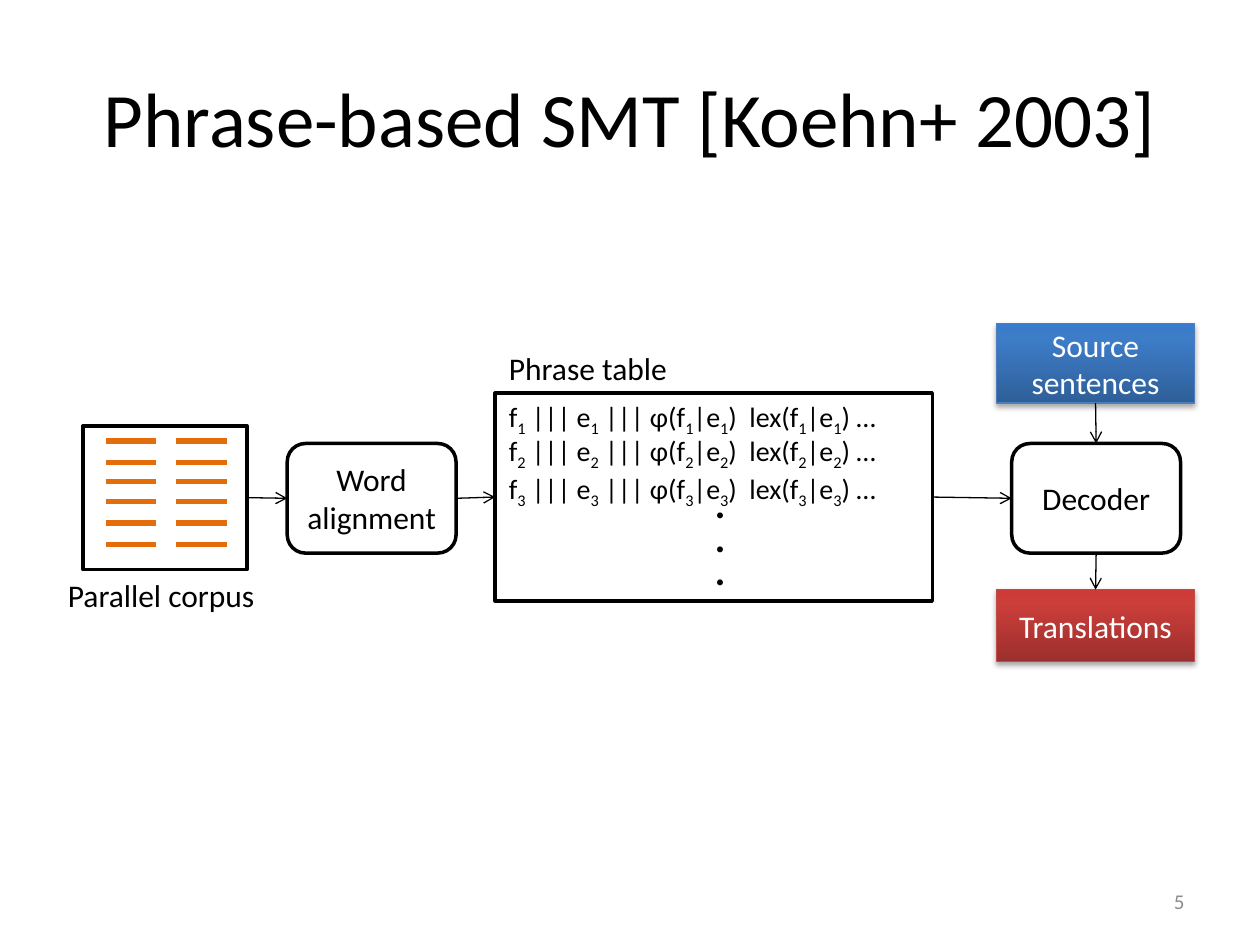
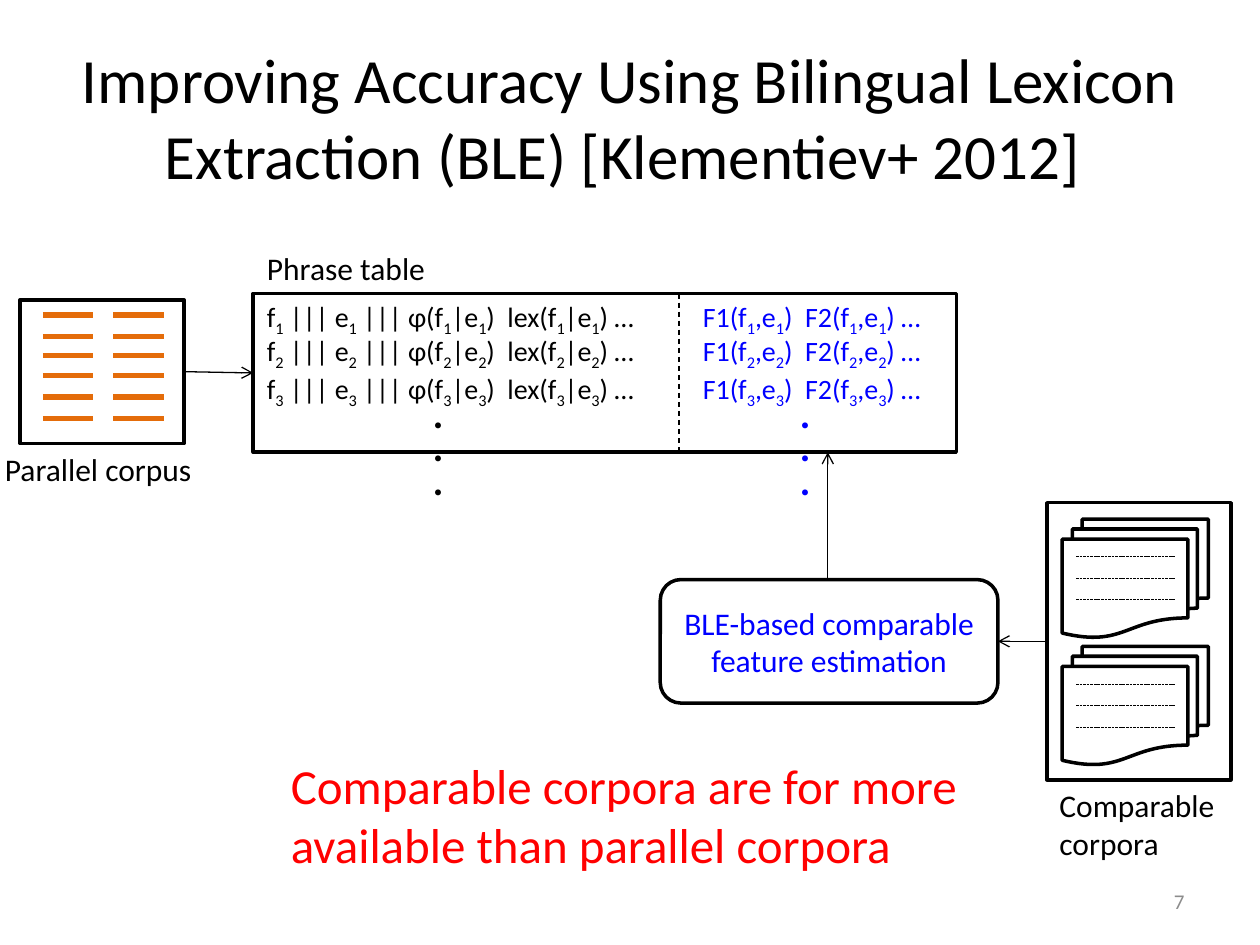
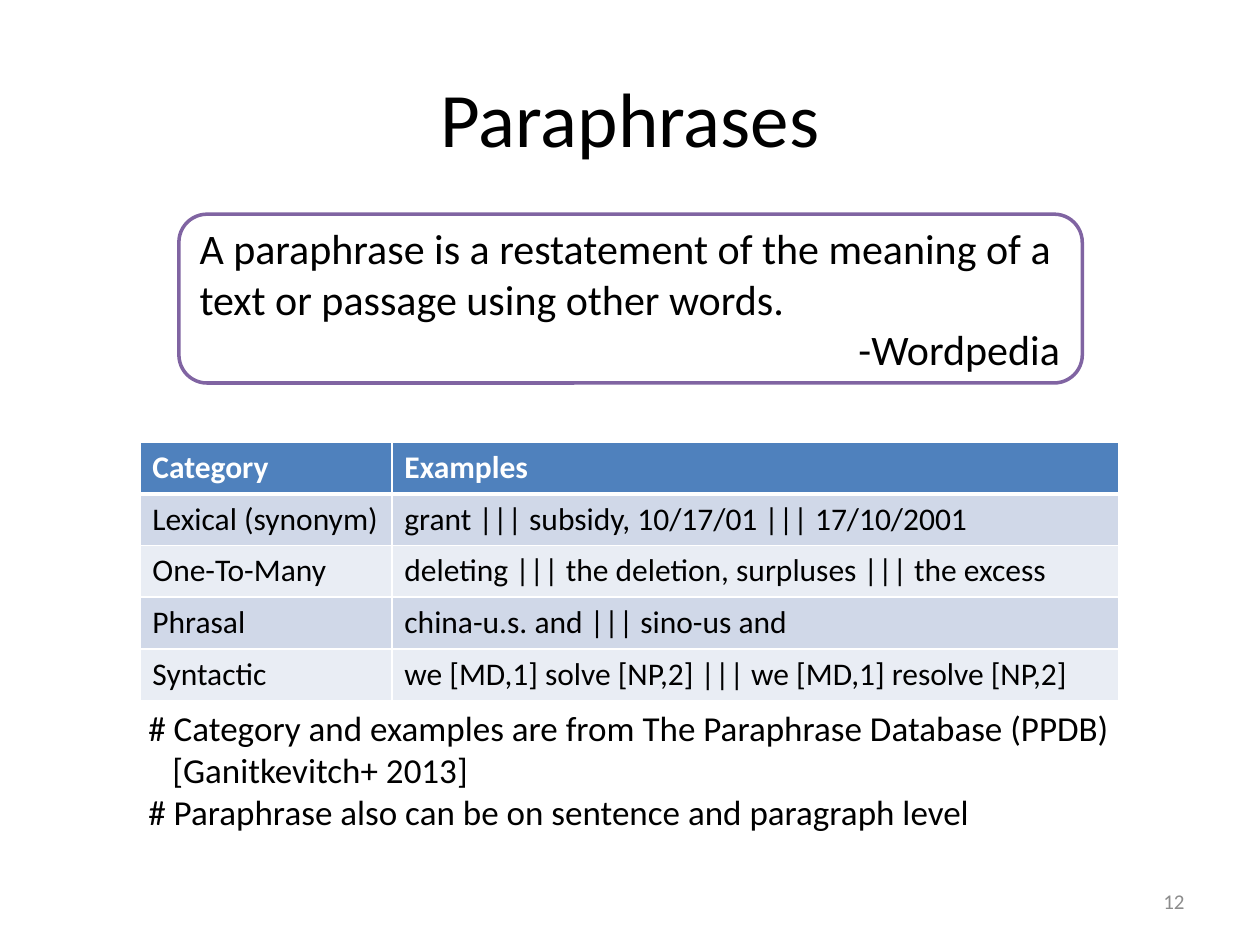
from dataclasses import dataclass

from lxml import etree
from pptx import Presentation
from pptx import util as u
from pptx.dml.color import RGBColor
from pptx.enum import dml, shapes, text
from pptx.oxml.ns import qn

# ---- Content ----
TITLES = {
    "smt": "Phrase-based SMT [Koehn+ 2003]",
    "ble": "Improving Accuracy Using Bilingual Lexicon Extraction (BLE) [Klementiev+ 2012] ",
    "paraphrases": "Paraphrases",
}
# An underscore lowers the one character that follows it.
PHRASE_ROW = "f_{n} ||| e_{n} ||| φ(f_{n}|e_{n})  lex(f_{n}|e_{n}) …"
FEATURE_ROW = "F1(f_{n},e_{n})  F2(f_{n},e_{n}) …"
DOTS_STACKED = ["・", "・", "・"]
DOTS_WRAPPED = ["・ ・ ・"]
CLAIM = ["Comparable corpora are for more", "available than parallel corpora"]
# A pair is a text and its left indent in inches.
DEFINITION = [
    "A paraphrase is a restatement of the meaning of a text or passage using other words.",
    ("-Wordpedia", 5.23),
]
CATEGORIES = [
    ("Category", "Examples"),
    ("Lexical (synonym)", "grant ||| subsidy, 10/17/01 ||| 17/10/2001"),
    ("One-To-Many", "deleting ||| the deletion, surpluses ||| the excess"),
    ("Phrasal", "china-u.s. and ||| sino-us and"),
    ("Syntactic", "we [MD,1] solve [NP,2] ||| we [MD,1] resolve [NP,2]"),
]
NOTES = [
    "# Category and examples are from The Paraphrase Database (PPDB)",
    ("[Ganitkevitch+ 2013]", 0.19),
    "# Paraphrase also can be on sentence and paragraph level",
]


@dataclass(frozen=True)
class Theme:
    font: str = "Calibri"
    black: str = "000000"
    white: str = "FFFFFF"
    grey: str = "8C8C8C"
    blue: str = "0000FF"
    red: str = "FF0000"
    orange: str = "E46C0A"
    purple: str = "8064A2"
    header: str = "4F81BD"
    bands: tuple = ("D0D8E8", "E9EDF4")
    source: tuple = ("2F5F99", "3D7CC7", "3A7CCB", "4B7EBC")
    output: tuple = ("9C2F2D", "CB3E3A", "CE3B37", "BF4C48")
    title: int = 44
    long_title: int = 36
    claim: int = 28
    quote: int = 24
    note: int = 20
    body: int = 18
    formula: int = 16
    number: int = 12


THEME = Theme()
WIDTH, HEIGHT = 10, 7.5
CORPUS_SIZE = (1.3, 1.14)
SENTENCE_ROWS = (0.12, 0.29, 0.44, 0.6, 0.77, 0.94)
SENTENCE_COLUMNS = (0.18, 0.74)
FORMULA_ROWS = (0, 0.27, 0.57)
LABEL_HEIGHT = 0.4
TOP, LEFT, BOTTOM, RIGHT = range(4)  # connection sites of a box
RECT = shapes.MSO_SHAPE.RECTANGLE
ROUND = shapes.MSO_SHAPE.ROUNDED_RECTANGLE
CENTER, RIGHT_ALIGNED = text.PP_ALIGN.CENTER, text.PP_ALIGN.RIGHT


def rgb(value):
    return RGBColor.from_string(value)


def inches(*lengths):
    return [u.Inches(length) for length in lengths]


def add_xml(parent, tag, **attributes):
    return etree.SubElement(parent, qn(tag), attributes)


# ---- Text ----
def write(frame, paragraphs, size=THEME.body, color=THEME.black, bold=False,
          align=None, middle=False):
    if isinstance(paragraphs, str):
        paragraphs = [paragraphs]
    frame.word_wrap = True
    frame.vertical_anchor = text.MSO_ANCHOR.MIDDLE if middle else text.MSO_ANCHOR.TOP
    for index, content in enumerate(paragraphs):
        para = frame.add_paragraph() if index else frame.paragraphs[0]
        para.alignment = align or text.PP_ALIGN.LEFT
        if isinstance(content, tuple):
            content, indent = content
            para._p.get_or_add_pPr().set("marL", str(u.Inches(indent)))
        first, *rest = content.split("_")
        pieces = [(first, False)]
        for piece in rest:
            pieces += [(piece[0], True), (piece[1:], False)]
        for words, lowered in pieces:
            span = para.add_run()
            span.text = words
            span.font.name, span.font.size = THEME.font, u.Pt(size)
            span.font.bold, span.font.color.rgb = bold, rgb(color)
            if lowered:
                span.font._element.set("baseline", "-25000")


def add_text(page, at, paragraphs, **style):
    box = page.shapes.add_textbox(*inches(*at))
    write(box.text_frame, paragraphs, **style)
    return box


# ---- Shapes and lines ----
def add_box(page, at, kind=RECT, words=None, line=THEME.black, weight=2, **style):
    box = page.shapes.add_shape(kind, *inches(*at))
    box.shadow.inherit = False
    box.fill.solid()
    box.fill.fore_color.rgb = rgb(THEME.white)
    box.line.color.rgb, box.line.width = rgb(line), u.Pt(weight)
    if words:
        write(box.text_frame, words, **{"middle": True, "align": CENTER, **style})
    return box


def add_glossy_box(page, at, words, colors):
    *stops, line = colors
    box = add_box(page, at, words=words, line=line, weight=0.75, color=THEME.white)
    box.fill.gradient()
    box.fill.gradient_angle = 90
    properties = box._element.spPr
    stop_list = properties.find(".//" + qn("a:gsLst"))
    for stop in list(stop_list):
        stop_list.remove(stop)
    for position, color in zip((0, 80, 100), stops):
        stop = add_xml(stop_list, "a:gs", pos=str(position * 1000))
        add_xml(stop, "a:srgbClr", val=color)
    shadow = add_xml(properties.find(qn("a:effectLst")), "a:outerShdw", blurRad="40000",
                     dist="23000", dir="5400000", rotWithShape="0")
    add_xml(add_xml(shadow, "a:srgbClr", val=THEME.black), "a:alpha", val="35000")
    return box


def add_line(page, start, end, color=THEME.black, weight=0.75, dash=None, arrow=False):
    line = page.shapes.add_connector(shapes.MSO_CONNECTOR.STRAIGHT, *inches(*start, *end))
    line.line.color.rgb, line.line.width = rgb(color), u.Pt(weight)
    if dash:
        line.line.dash_style = dash
    if arrow:
        add_xml(line.line._get_or_add_ln(), "a:tailEnd", type="arrow")
    add_xml(line._element.spPr, "a:effectLst")
    return line


def join(page, source, source_side, target, target_side):
    arrow = add_line(page, (0, 0), (1, 1), arrow=True)
    arrow.begin_connect(source, source_side)
    arrow.end_connect(target, target_side)


# ---- Parts of the diagrams ----
def add_parallel_corpus(page, left, top):
    box = add_box(page, (left, top, *CORPUS_SIZE))
    for column in SENTENCE_COLUMNS:
        for row in SENTENCE_ROWS:
            x, y = left + column, top + row
            add_line(page, (x, y), (x + 0.4, y), THEME.orange, 3)
    add_text(page, (left - 0.22, top + CORPUS_SIZE[1], 1.72, LABEL_HEIGHT), "Parallel corpus")
    return box


def add_formulas(page, left, top, width, pattern, color=THEME.black):
    for number, row in enumerate(FORMULA_ROWS, 1):
        add_text(page, (left, top + row, width, 0.37), pattern.format(n=number),
                 size=THEME.formula, color=color)


def add_phrase_table(page, left, top, width, height):
    box = add_box(page, (left, top, width, height))
    add_formulas(page, left + 0.01, top, 3.21, PHRASE_ROW)
    add_text(page, (left + 0.01, top - LABEL_HEIGHT, 1.48, LABEL_HEIGHT), "Phrase table")
    return box


def add_wrapped_dots(page, left, top, color):
    """Dots in a column narrow enough to hold one dot a line."""
    box = add_text(page, (left, top, 0.66, 0.37), DOTS_WRAPPED,
                   size=THEME.formula, color=color)
    box.text_frame.margin_right = u.Inches(0.25)


def add_documents(page, left, top):
    add_box(page, (left, top, 1.16, 0.94), shapes.MSO_SHAPE.FLOWCHART_MULTIDOCUMENT)
    for row in range(3):
        y = top + 0.3 + 0.17 * row
        add_line(page, (left + 0.11, y), (left + 0.9, y), weight=0.5,
                 dash=dml.MSO_LINE.SQUARE_DOT)


def add_category_table(page, left, top, columns, row_height):
    frame = page.shapes.add_table(len(CATEGORIES), len(columns), *inches(
        left, top, sum(columns), row_height * len(CATEGORIES)))
    table = frame.table
    for column, width in zip(table.columns, columns):
        column.width = u.Inches(width)
    for index, row in enumerate(CATEGORIES):
        table.rows[index].height = u.Inches(row_height)
        is_header = index == 0
        for column, words in enumerate(row):
            cell = table.cell(index, column)
            cell.fill.solid()
            cell.fill.fore_color.rgb = rgb(
                THEME.header if is_header else THEME.bands[(index - 1) % 2])
            write(cell.text_frame, words, bold=is_header,
                  color=THEME.white if is_header else THEME.black)
            add_borders(cell, top=3 if index == 1 else 1, bottom=3 if is_header else 1)


def add_borders(cell, top, bottom):
    properties = cell._tc.get_or_add_tcPr()
    weights = {"a:lnL": 1, "a:lnR": 1, "a:lnT": top, "a:lnB": bottom}
    for place, (tag, weight) in enumerate(weights.items()):
        border = add_xml(properties, tag, w=str(u.Pt(weight)))
        add_xml(add_xml(border, "a:solidFill"), "a:srgbClr", val=THEME.white)
        properties.insert(place, border)


# ---- Slides ----
def add_page(deck, title, number, size=THEME.title):
    page = deck.slides.add_slide(deck.slide_layouts[6])
    add_text(page, (0.05 * WIDTH, 0.04 * HEIGHT, 0.9 * WIDTH, 1.25), title,
             size=size, align=CENTER, middle=True)
    add_text(page, (7.17, 6.95, 2.33, 0.4), str(number), size=THEME.number,
             color=THEME.grey, align=RIGHT_ALIGNED, middle=True)
    return page


def add_smt_page(deck):
    page = add_page(deck, TITLES["smt"], 5)
    corpus = add_parallel_corpus(page, 0.66, 3.38)
    alignment = add_box(page, (2.28, 3.52, 1.34, 0.87), ROUND, "Word alignment")
    phrases = add_phrase_table(page, 3.93, 3.12, 3.47, 1.65)
    add_text(page, (5.51, 3.91, 0.31, 0.91), DOTS_STACKED, size=THEME.formula)
    decoder = add_box(page, (8.03, 3.52, 1.34, 0.87), ROUND, "Decoder")
    source = add_glossy_box(page, (7.91, 2.57, 1.57, 0.63), "Source sentences", THEME.source)
    output = add_glossy_box(page, (7.91, 4.68, 1.57, 0.57), "Translations", THEME.output)
    steps = [corpus, alignment, phrases, decoder]
    for before, after in zip(steps, steps[1:]):
        join(page, before, RIGHT, after, LEFT)
    join(page, source, BOTTOM, decoder, TOP)
    join(page, decoder, BOTTOM, output, TOP)


def add_ble_page(deck):
    page = add_page(deck, TITLES["ble"], 7, THEME.long_title)
    left, top, width, height = 2.01, 2.33, 5.58, 1.26
    bottom = top + height
    corpus = add_parallel_corpus(page, 0.16, 2.38)
    phrases = add_phrase_table(page, left, top, width, height)
    add_formulas(page, 5.48, top, 1.99, FEATURE_ROW, THEME.blue)
    add_wrapped_dots(page, 3.27, 3.19, THEME.black)
    add_wrapped_dots(page, 6.18, 3.19, THEME.blue)
    add_line(page, (5.39, top), (5.39, bottom), dash=dml.MSO_LINE.DASH)

    comparable = add_box(page, (8.31, 3.99, 1.46, 2.2))
    for documents_top in (4.12, 5.13):
        add_documents(page, 8.43, documents_top)
    add_text(page, (8.31, 6.19, 1.45, 0.71), ["Comparable", "corpora"])
    estimation = add_box(page, (5.24, 4.6, 2.68, 0.98), ROUND,
                         "BLE-based comparable feature estimation", color=THEME.blue)
    join(page, corpus, RIGHT, phrases, LEFT)
    join(page, comparable, LEFT, estimation, RIGHT)
    add_line(page, (6.57, 4.6), (6.57, bottom), arrow=True)
    add_text(page, (2.21, 5.95, 5.58, 1.04), CLAIM, size=THEME.claim, color=THEME.red)


def add_paraphrases_page(deck):
    page = add_page(deck, TITLES["paraphrases"], 12)
    add_box(page, (1.42, 1.7, 7.17, 1.34), ROUND, DEFINITION, line=THEME.purple,
            size=THEME.quote, align=text.PP_ALIGN.LEFT)
    add_category_table(page, 1.11, 3.51, (2, 5.77), 0.41)
    add_text(page, (1.08, 5.56, 8.07, 1.11), NOTES, size=THEME.note)


def main():
    deck = Presentation()
    deck.slide_width, deck.slide_height = inches(WIDTH, HEIGHT)
    add_smt_page(deck)
    add_ble_page(deck)
    add_paraphrases_page(deck)
    deck.save("out.pptx")


if __name__ == "__main__":
    main()
